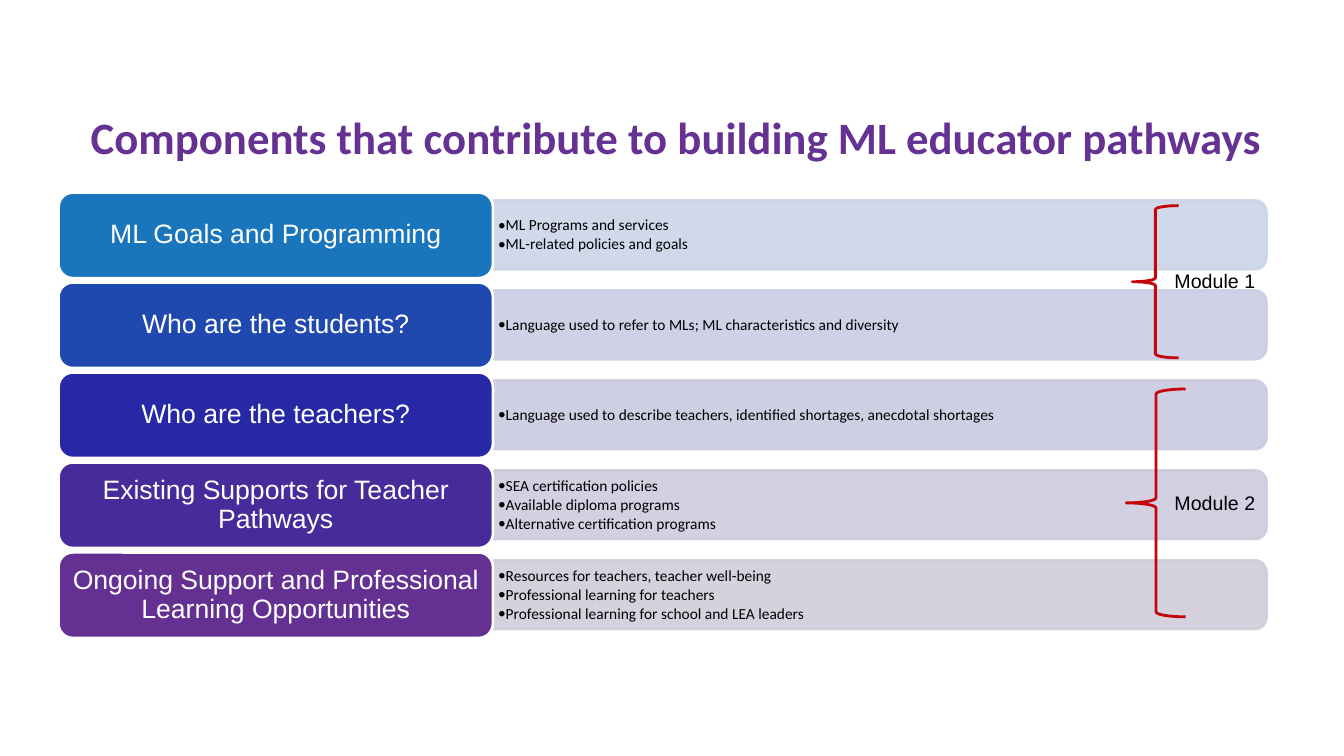
"""Builds the slide on components of ML educator pathways."""
from dataclasses import dataclass

from lxml import etree
from pptx import Presentation
from pptx.dml.color import RGBColor
from pptx.enum.shapes import MSO_SHAPE
from pptx.enum.text import MSO_ANCHOR, PP_ALIGN
from pptx.oxml.ns import qn
from pptx.util import Inches, Pt

ROUND = MSO_SHAPE.ROUNDED_RECTANGLE
TAB = MSO_SHAPE.ROUND_2_SAME_RECTANGLE
BRACE = MSO_SHAPE.LEFT_BRACE
TOP, MID = MSO_ANCHOR.TOP, MSO_ANCHOR.MIDDLE
LEFT, CENTER = PP_ALIGN.LEFT, PP_ALIGN.CENTER


@dataclass(frozen=True)
class Theme:
    """Holds the colours, fonts and type sizes."""
    title: str = "653293"
    brace: str = "C5050C"
    white: str = "FFFFFF"
    black: str = "000000"
    sans: str = "Arial"
    body: str = "Calibri"
    head: int = 32
    label: int = 19
    module: int = 14
    item: int = 11


THEME = Theme()
FIRST, LAST = 1.91, 5.48
ROWS = [
    ("ML Goals and Programming", "1975BC", "CBD5E7",
     ["ML Programs and services", "ML-related policies and goals"]),
    ("Who are the students?", "2049B0", "CACEE4",
     ["Language used to refer to MLs; ML characteristics and diversity"]),
    ("Who are the teachers?", "2628A6", "CACAE1",
     ["Language used to describe teachers, identified shortages, anecdotal shortages"]),
    ("Existing Supports for Teacher Pathways", "472B9B", "CECBDE",
     ["SEA certification policies", "Available diploma programs",
      "Alternative certification programs"]),
    ("Ongoing Support and Professional Learning Opportunities", "643092", "D1CCDA",
     ["Resources for teachers, teacher well-being", "Professional learning for teachers",
      "Professional learning for school and LEA leaders"]),
]
MODULES = [
    ("Module 1", 2.62, (11.23, 2.04, 0.46, 1.51)),
    ("Module 2", 4.82, (11.17, 3.86, 0.59, 2.26)),
]


def color(code):
    """Turn a hex code into a colour."""
    return RGBColor.from_string(code)


def add_dot(para):
    """Give a paragraph a round bullet with a tight hanging indent."""
    para.level = 1
    props = para._p.get_or_add_pPr()
    props.set("marL", str(Inches(0.06)))
    props.set("indent", str(Inches(-0.08)))
    tint = etree.SubElement(props, qn("a:buClr"))
    etree.SubElement(tint, qn("a:srgbClr"), val=THEME.black)
    etree.SubElement(props, qn("a:buFont"), typeface=THEME.body)
    etree.SubElement(props, qn("a:buChar"), char="•")


def write(shape, lines, *, size, font, ink=THEME.black, bold=False, align=LEFT,
          anchor=MID, inset=(0.1, 0.05), space=1.0, gap=0, after=0,
          dots=False, wrap=True):
    """Write lines of text into a shape."""
    frame = shape.text_frame
    frame.word_wrap = wrap
    frame.vertical_anchor = anchor
    frame.margin_left = frame.margin_right = Inches(inset[0])
    frame.margin_top = frame.margin_bottom = Inches(inset[1])
    for num, line in enumerate(lines):
        para = frame.add_paragraph() if num else frame.paragraphs[0]
        if dots:
            add_dot(para)
        para.alignment = align
        para.line_spacing = space
        para.space_before = Pt(gap if num else 0)
        para.space_after = Pt(after)
        run = para.add_run()
        run.text = line
        run.font.name = font
        run.font.size = Pt(size)
        run.font.bold = bold
        run.font.color.rgb = color(ink)


def add_box(slide, *place):
    """Add a text box placed in inches."""
    return slide.shapes.add_textbox(*map(Inches, place))


def add_form(slide, kind, place, line, fill=None):
    """Add a preset shape with a two-point outline."""
    form = slide.shapes.add_shape(kind, *map(Inches, place))
    form.shadow.inherit = False
    form.line.color.rgb = color(line)
    form.line.width = Pt(2)
    if fill:
        form.fill.solid()
        form.fill.fore_color.rgb = color(fill)
    else:
        form.fill.background()
    return form


def add_bar(slide, top, tint):
    """Add a pale bar, rounded on its right end."""
    wide, high = 7.66, 0.68
    left = 4.9 + (wide - high) / 2
    bar = add_form(slide, TAB, (left, top + 0.42 - wide / 2, high, wide), tint, tint)
    bar.rotation = 90
    for node in bar._element.spPr.iter(qn("a:srgbClr")):
        etree.SubElement(node, qn("a:alpha"), val="90000")


def add_row(slide, top, label, fill, tint, items):
    """Add one component: its bar, its items and its label."""
    add_bar(slide, top, tint)
    write(add_box(slide, 4.89, top + 0.12, 7.63, 0.61), items, size=THEME.item,
          font=THEME.body, inset=(0.05, 0.02), space=0.9, gap=1.6, dots=True)
    card = add_form(slide, ROUND, (0.58, top, 4.31, 0.85), THEME.white, fill)
    write(card, [label], size=THEME.label, font=THEME.sans, ink=THEME.white,
          align=CENTER, inset=(0.09, 0.04), space=0.9)


def add_module(slide, name, top, place):
    """Add a module name and the brace that groups its rows."""
    write(add_box(slide, 11.55, top, 1.01, 0.34), [name], size=THEME.module,
          font=THEME.sans, anchor=TOP, wrap=False)
    add_form(slide, BRACE, place, THEME.brace)


def main():
    """Build and save the slide."""
    deck = Presentation()
    deck.slide_width, deck.slide_height = Inches(13.33), Inches(7.5)
    slide = deck.slides.add_slide(deck.slide_layouts[6])
    write(add_box(slide, 0.8, 1.18, 11.98, 0.54),
          ["Components that contribute to building ML educator pathways"],
          size=THEME.head, font=THEME.body, ink=THEME.title, bold=True,
          space=0.5, after=7)
    pitch = (LAST - FIRST) / (len(ROWS) - 1)
    for num, row in enumerate(ROWS):
        add_row(slide, FIRST + num * pitch, *row)
    for module in MODULES:
        add_module(slide, *module)
    deck.save("out.pptx")


if __name__ == "__main__":
    main()
